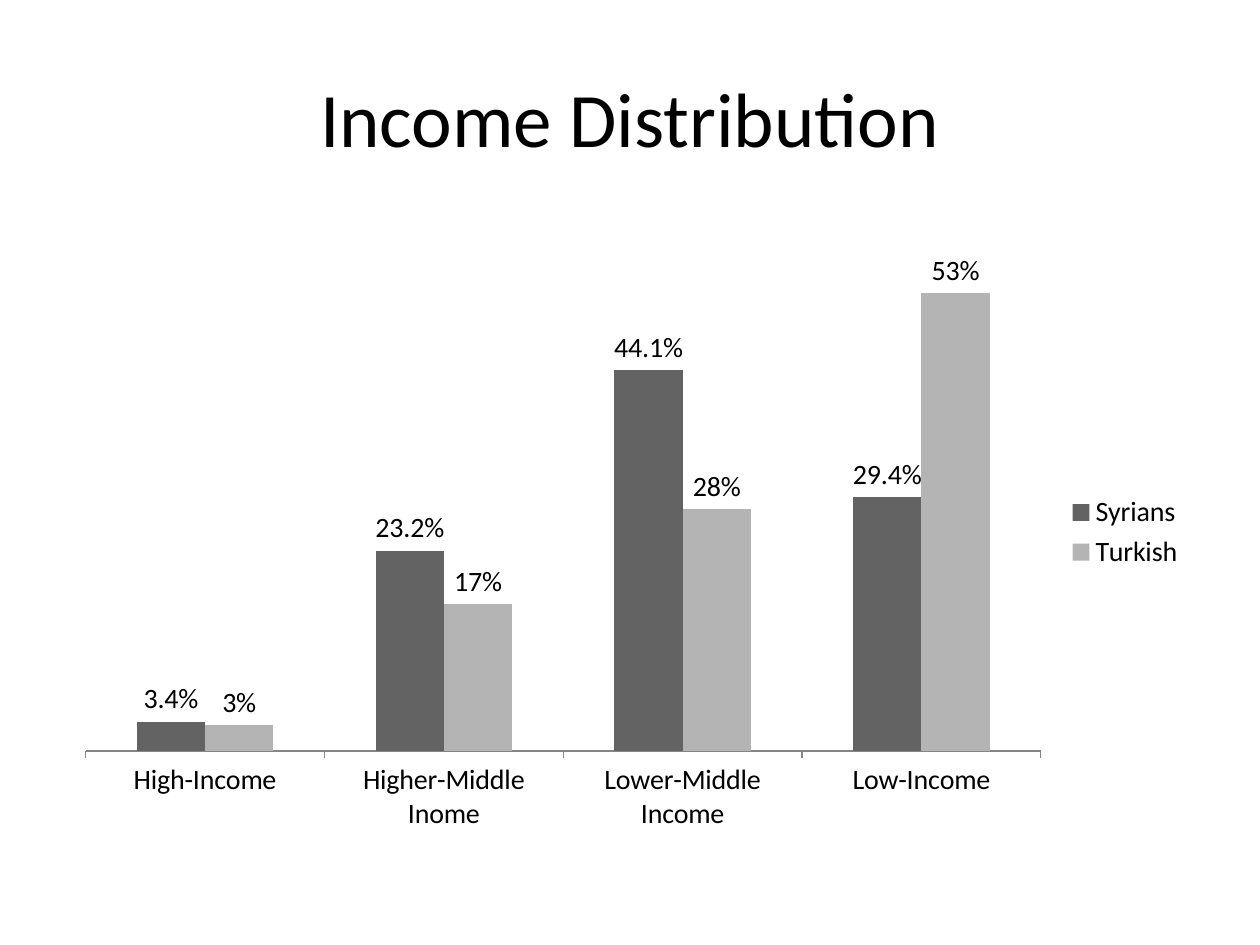
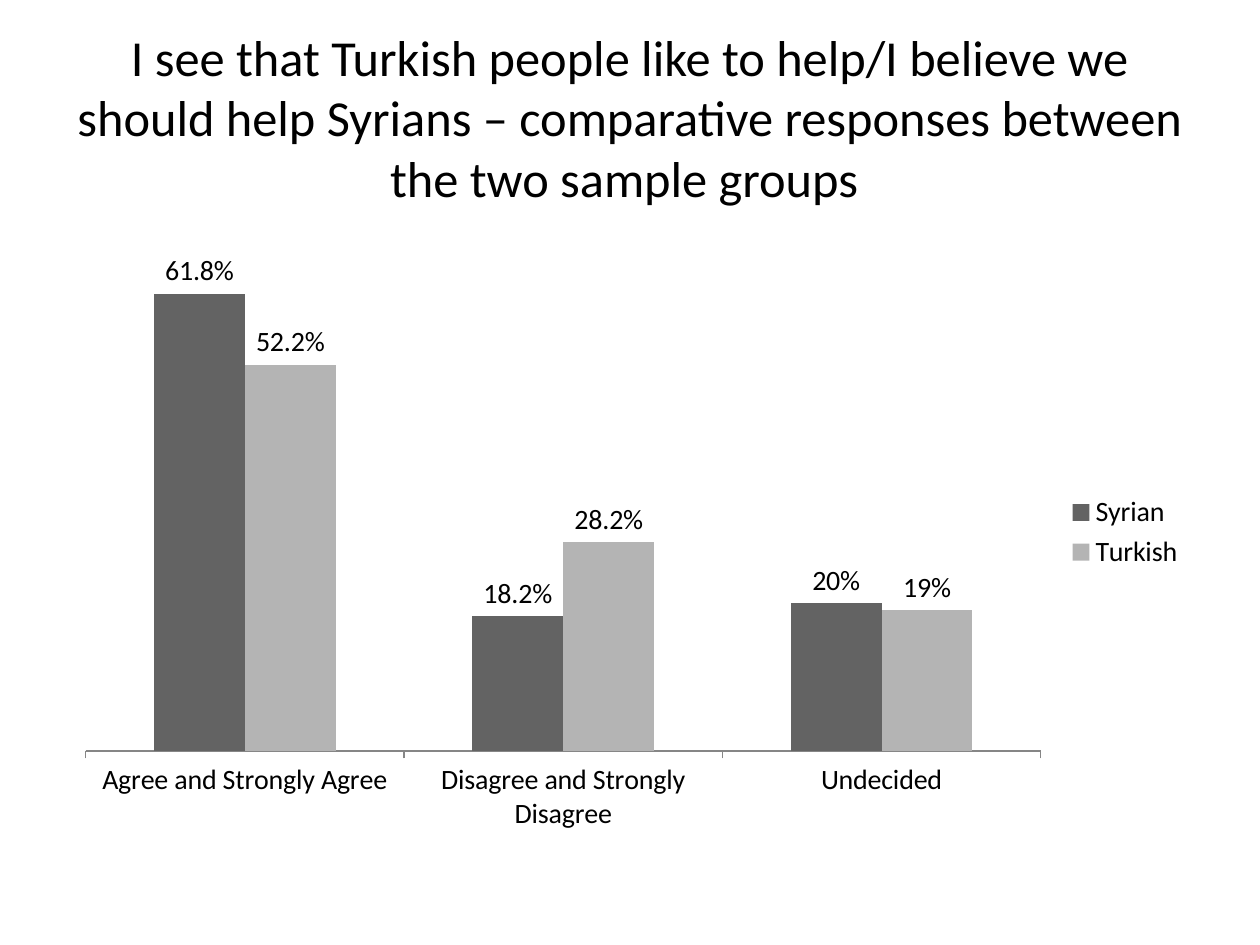
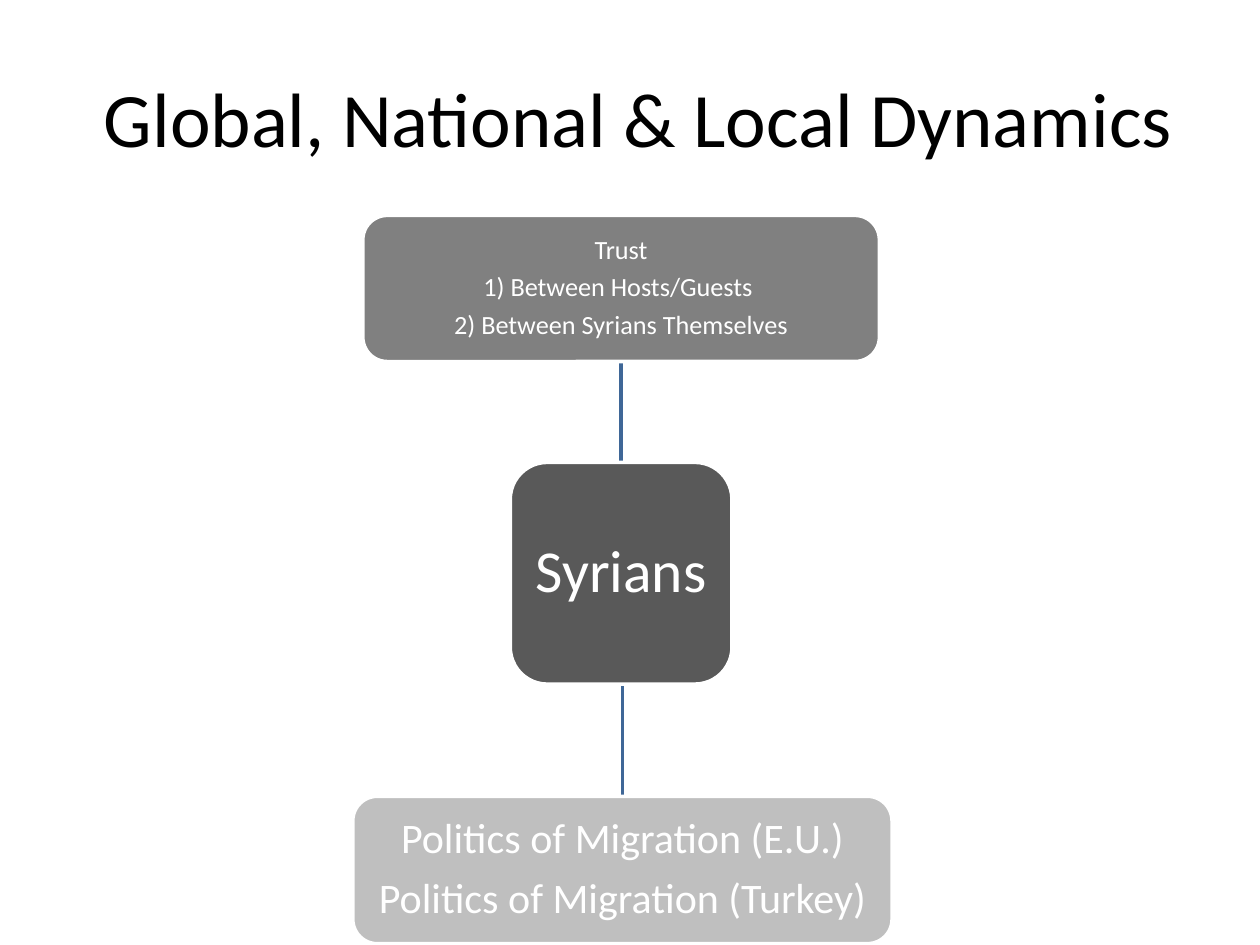
from dataclasses import dataclass

from lxml import etree
from pptx import Presentation
from pptx.chart.data import CategoryChartData
from pptx.dml.color import RGBColor
from pptx.enum.chart import XL_CHART_TYPE, XL_LABEL_POSITION, XL_LEGEND_POSITION, XL_TICK_MARK
from pptx.enum.shapes import MSO_CONNECTOR, MSO_SHAPE
from pptx.enum.text import MSO_ANCHOR, PP_ALIGN
from pptx.oxml.ns import qn
from pptx.util import Inches, Pt

COLUMN = XL_CHART_TYPE.COLUMN_CLUSTERED
ABOVE = XL_LABEL_POSITION.OUTSIDE_END
RIGHT = XL_LEGEND_POSITION.RIGHT
OUT, NONE = XL_TICK_MARK.OUTSIDE, XL_TICK_MARK.NONE
ROUND = MSO_SHAPE.ROUNDED_RECTANGLE
LINE = MSO_CONNECTOR.STRAIGHT
MIDDLE, CENTER = MSO_ANCHOR.MIDDLE, PP_ALIGN.CENTER


@dataclass(frozen=True)
class Theme:
    font: str = "Calibri"
    ink: RGBColor = RGBColor.from_string("000000")
    white: RGBColor = RGBColor.from_string("FFFFFF")
    axis: RGBColor = RGBColor.from_string("868686")
    link: RGBColor = RGBColor.from_string("3F6797")
    bars: tuple = (RGBColor.from_string("636363"), RGBColor.from_string("B4B4B4"))
    mid: RGBColor = RGBColor.from_string("808080")
    dark: RGBColor = RGBColor.from_string("595959")
    light: RGBColor = RGBColor.from_string("BFBFBF")
    title: float = 44
    small: float = 28.8
    label: float = 16
    trust: float = 15
    core: float = 34
    policy: float = 24


theme = Theme()


def style(font, size, color):
    font.name = theme.font
    font.size = Pt(size)
    font.color.rgb = color


def write(frame, lines, size, color, inset, lead=1.0):
    frame.word_wrap = True
    frame.vertical_anchor = MIDDLE
    frame.margin_left = frame.margin_right = Inches(inset)
    frame.margin_top = frame.margin_bottom = Inches(inset)
    for i, line in enumerate(lines):
        para = frame.add_paragraph() if i else frame.paragraphs[0]
        para.alignment = CENTER
        para.line_spacing = lead
        para.space_before = Pt(size * 0.35 if i else 0)
        run = para.add_run()
        run.text = line
        style(run.font, size, color)


deck = Presentation()
deck.slide_width, deck.slide_height = Inches(10), Inches(7.5)

# Titles, one per slide
titles = [
    ("Income Distribution", theme.title),
    ("I see that Turkish people like to help/I believe we should help Syrians"
     " – comparative responses between the two sample groups ", theme.small),
    (" Global, National & Local Dynamics", theme.title),
]
slides = []
for text, size in titles:
    slide = deck.slides.add_slide(deck.slide_layouts[6])
    box = slide.shapes.add_textbox(Inches(0.5), Inches(0.3), Inches(9), Inches(1.25))
    write(box.text_frame, [text], size, theme.ink, 0.1)
    slides.append(slide)

# Column charts: categories, axis top, series with number format
charts = [
    (["High-Income", "Higher-Middle Inome", "Lower-Middle Income", "Low-Income"], 0.6,
     [("Syrians", "0.0%", [0.034, 0.232, 0.441, 0.294]),
      ("Turkish", "0%", [0.03, 0.17, 0.28, 0.53])]),
    (["Agree and Strongly Agree", "Disagree and Strongly Disagree", "Undecided"], 0.7,
     [("Syrian", "0.0%", [0.618, 0.182, 0.2]),
      ("Turkish", "0.0%", [0.522, 0.282, 0.19])]),
]
for slide, (cats, top, rows) in zip(slides, charts):
    data = CategoryChartData()
    data.categories = cats
    for name, form, vals in rows:
        data.add_series(name, vals, form)
    chart = slide.shapes.add_chart(
        COLUMN, Inches(0.5), Inches(1.75), Inches(9), Inches(4.95), data).chart
    style(chart.font, theme.label, theme.ink)
    chart.has_title = False
    chart.has_legend = True
    chart.legend.position = RIGHT
    chart.legend.include_in_layout = False
    style(chart.legend.font, theme.label, theme.ink)

    # Axes
    base = chart.category_axis
    base.major_tick_mark, base.minor_tick_mark = OUT, NONE
    base.format.line.color.rgb = theme.axis
    style(base.tick_labels.font, theme.label, theme.ink)
    scale = chart.value_axis
    scale.visible = False
    scale.has_major_gridlines = False
    scale.minimum_scale, scale.maximum_scale = 0, top

    # Bars and their labels
    plot = chart.plots[0]
    plot.gap_width, plot.overlap = 150, 0
    plot.vary_by_categories = False
    for bar, color, (name, form, vals) in zip(plot.series, theme.bars, rows):
        bar.format.fill.solid()
        bar.format.fill.fore_color.rgb = color
        tags = bar.data_labels
        tags.show_value = True
        tags.position = ABOVE
        tags.number_format, tags.number_format_is_linked = form, False
        style(tags.font, theme.label, theme.ink)
        for i, val in enumerate(vals):
            # Whole percentages drop the decimal
            if form == "0.0%" and f"{val:.1%}".endswith(".0%"):
                tag = bar.points[i].data_label
                run = tag.text_frame.paragraphs[0].add_run()
                run.text = f"{val:.0%}"
                style(run.font, theme.label, theme.ink)
                tag.position = ABOVE

# Diagram links
shapes = slides[2].shapes
for x, start, end in [(4.93, 2.87, 3.67), (4.94, 5.43, 6.32)]:
    link = shapes.add_connector(LINE, Inches(x), Inches(start), Inches(x), Inches(end))
    link.line.color.rgb = theme.link
    link.line.width = Pt(2)
    etree.SubElement(link._element.spPr, qn("a:effectLst"))

# Diagram boxes
nodes = [
    (2.88, 1.71, 4.1, 1.16, theme.mid, theme.trust,
     ["Trust", "1) Between Hosts/Guests ", "2) Between Syrians Themselves"]),
    (4.05, 3.67, 1.76, 1.76, theme.dark, theme.core, ["Syrians"]),
    (2.8, 6.32, 4.28, 1.17, theme.light, theme.policy,
     ["Politics of Migration (E.U.)", "Politics of Migration (Turkey)"]),
]
for x, y, w, h, color, size, lines in nodes:
    node = shapes.add_shape(ROUND, Inches(x), Inches(y), Inches(w), Inches(h))
    node.shadow.inherit = False
    node.fill.solid()
    node.fill.fore_color.rgb = color
    node.line.color.rgb = theme.white
    node.line.width = Pt(2)
    write(node.text_frame, lines, size, theme.white, 0.04, 0.9)

deck.save("out.pptx")
